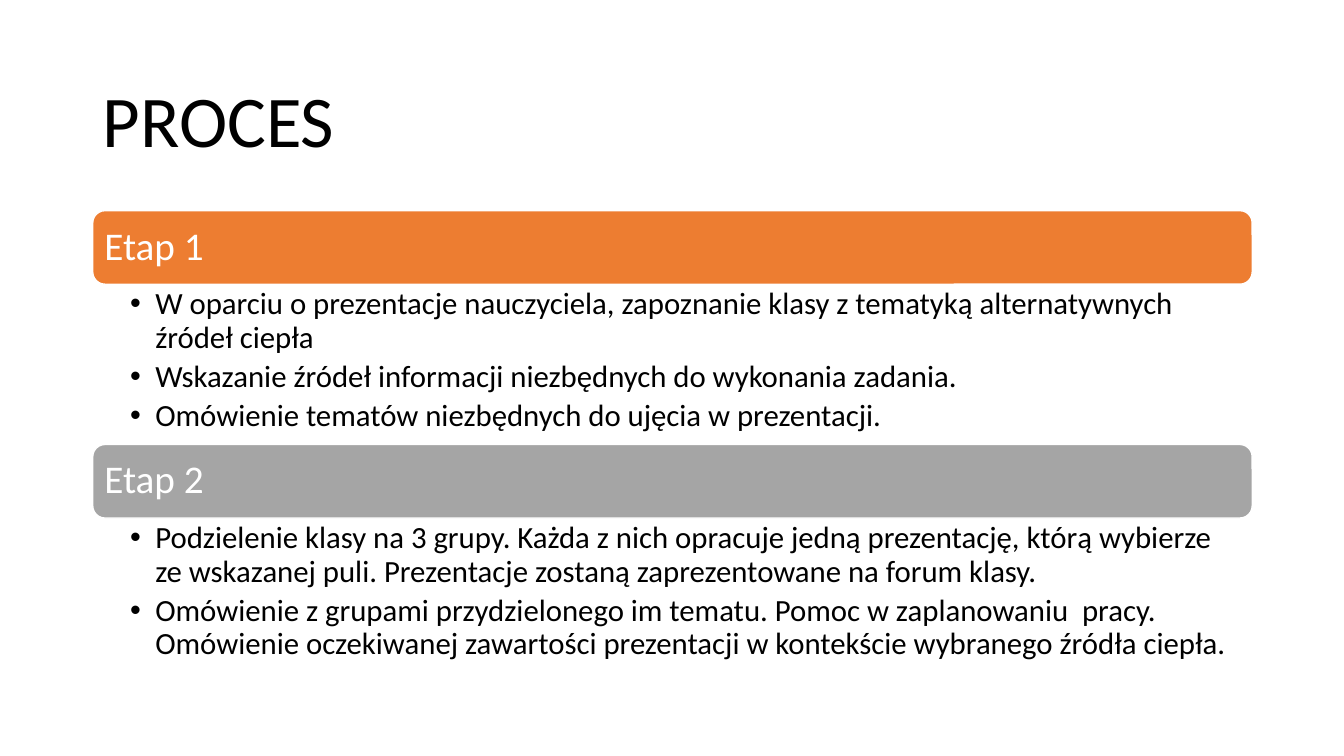
from dataclasses import dataclass

from lxml.etree import SubElement
from pptx import Presentation
from pptx.dml.color import RGBColor
from pptx.enum.shapes import MSO_SHAPE
from pptx.enum.text import MSO_ANCHOR, MSO_AUTO_SIZE, PP_ALIGN
from pptx.oxml.ns import qn
from pptx.shapes.base import BaseShape
from pptx.slide import Slide
from pptx.text.text import TextFrame, _Paragraph
from pptx.util import Emu, Pt


@dataclass(frozen=True)
class Theme:
    font: str = "Calibri"
    text: str = "000000"
    inverse: str = "FFFFFF"
    orange: str = "ED7D31"
    gray: str = "A5A5A5"
    title_size: int = 52
    bar_size: int = 28
    list_size: int = 22
    list_gap: float = 4.4
    line_spacing: float = 0.9


@dataclass(frozen=True)
class Stage:
    name: str
    color: str
    top: int
    list_height: int
    points: tuple[str, ...]


THEME = Theme()
LEFT, WIDTH, BAR_HEIGHT = 92, 1150, 73
BULLET_INDENT = 25

STAGES = (
    Stage("Etap 1", THEME.orange, 209, 158, (
        "W oparciu o prezentacje nauczyciela, zapoznanie klasy z tematyką "
        "alternatywnych źródeł ciepła",
        "Wskazanie źródeł informacji niezbędnych do wykonania zadania.",
        "Omówienie tematów niezbędnych do ujęcia w prezentacji.",
    )),
    Stage("Etap 2", THEME.gray, 441, 152, (
        "Podzielenie klasy na 3 grupy. Każda z nich opracuje jedną prezentację, "
        "którą wybierze ze wskazanej puli. Prezentacje zostaną zaprezentowane "
        "na forum klasy.",
        "Omówienie z grupami przydzielonego im tematu. Pomoc w zaplanowaniu  pracy. "
        "Omówienie oczekiwanej zawartości prezentacji w kontekście wybranego "
        "źródła ciepła.",
    )),
)


def px(n: int) -> Emu:
    """Convert px, 100 to the inch, into EMU."""
    return Emu(n * 9144)


def place(sp: BaseShape, top: int, height: int) -> None:
    sp.left, sp.top, sp.width, sp.height = px(LEFT), px(top), px(WIDTH), px(height)


def set_frame(tf: TextFrame, anchor: MSO_ANCHOR, left: int, right: int, edge: int) -> None:
    tf.word_wrap = True
    tf.auto_size = MSO_AUTO_SIZE.NONE
    tf.vertical_anchor = anchor
    tf.margin_left, tf.margin_right = px(left), px(right)
    tf.margin_top = tf.margin_bottom = px(edge)


def write(p: _Paragraph, text: str, size: int, color: str) -> None:
    p.alignment = PP_ALIGN.LEFT
    p.line_spacing = THEME.line_spacing
    p.space_before = Pt(0)
    r = p.add_run()
    r.text = text
    r.font.name = THEME.font
    r.font.size = Pt(size)
    r.font.color.rgb = RGBColor.from_string(color)


def add_bullet(p: _Paragraph) -> None:
    pPr = p._p.get_or_add_pPr()
    pPr.set("marL", str(px(BULLET_INDENT)))
    pPr.set("indent", str(-px(BULLET_INDENT)))
    SubElement(pPr, qn("a:buFont"), typeface="Arial")
    SubElement(pPr, qn("a:buChar"), char="•")


def add_bar(s: Slide, stage: Stage) -> None:
    sp = s.shapes.add_shape(MSO_SHAPE.ROUNDED_RECTANGLE, 0, 0, 0, 0)
    place(sp, stage.top, BAR_HEIGHT)
    sp.shadow.inherit = False
    sp.fill.solid()
    sp.fill.fore_color.rgb = RGBColor.from_string(stage.color)
    sp.line.color.rgb = RGBColor.from_string(THEME.inverse)
    sp.line.width = Pt(1)
    set_frame(sp.text_frame, MSO_ANCHOR.MIDDLE, 8, 8, 8)
    write(sp.text_frame.paragraphs[0], stage.name, THEME.bar_size, THEME.inverse)


def fill_list(sp: BaseShape, stage: Stage) -> None:
    place(sp, stage.top + BAR_HEIGHT, stage.list_height)
    tf = sp.text_frame
    set_frame(tf, MSO_ANCHOR.TOP, 37, 22, 4)
    for i, point in enumerate(stage.points):
        p = tf.add_paragraph() if i else tf.paragraphs[0]
        write(p, point, THEME.list_size, THEME.text)
        p.space_after = Pt(THEME.list_gap)
        add_bullet(p)


def main() -> None:
    prs = Presentation()
    prs.slide_width, prs.slide_height = px(1333), px(750)
    s = prs.slides.add_slide(prs.slide_layouts.get_by_name("Two Content"))
    title, *lists = s.placeholders
    place(title, 61, 124)
    set_frame(title.text_frame, MSO_ANCHOR.MIDDLE, 10, 10, 5)
    write(title.text_frame.paragraphs[0], "PROCES", THEME.title_size, THEME.text)
    for sp, stage in zip(lists, STAGES):
        add_bar(s, stage)
        fill_list(sp, stage)
    prs.save("out.pptx")


if __name__ == "__main__":
    main()
